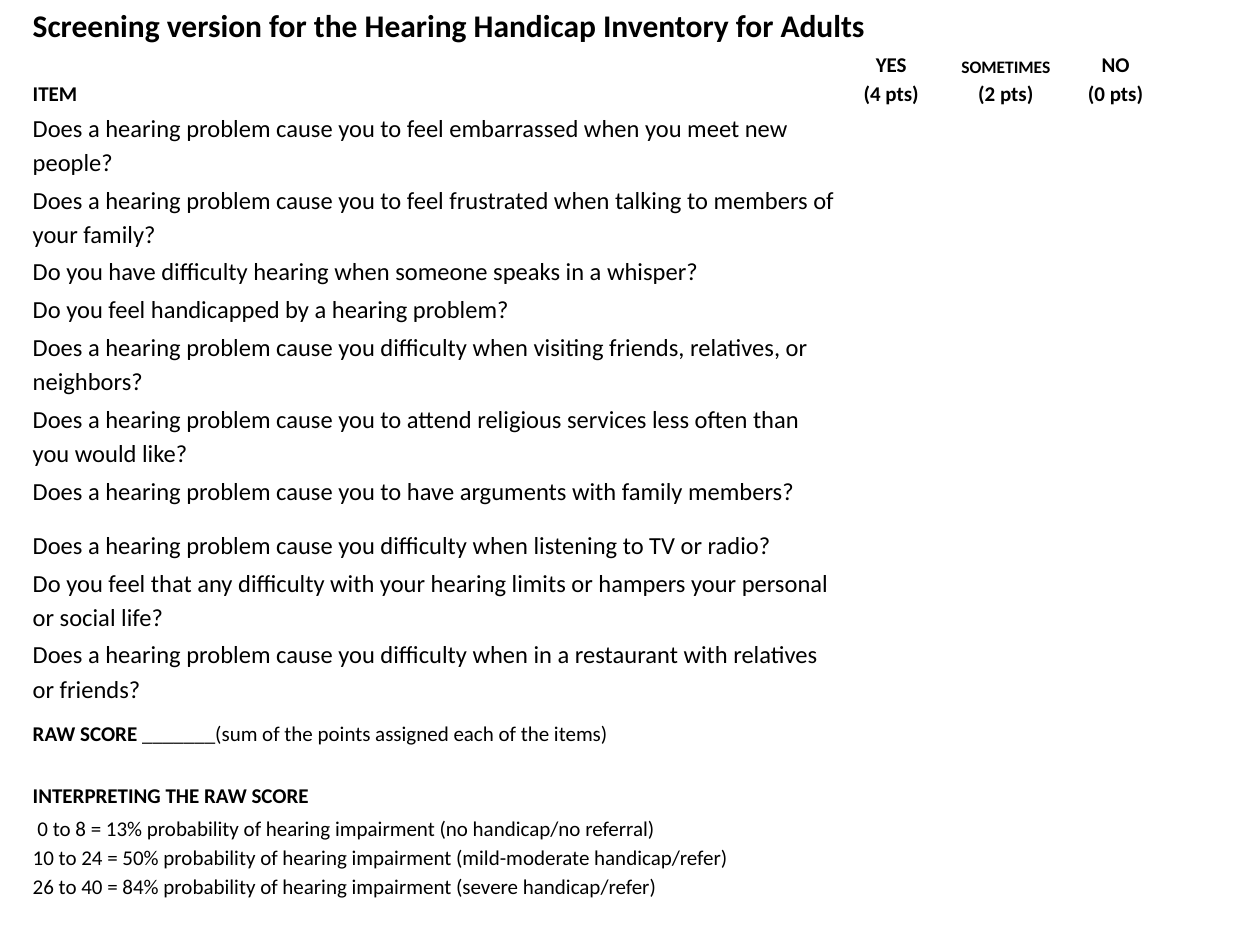
from lxml.etree import SubElement
from pptx import Presentation
from pptx.dml.color import RGBColor
from pptx.enum.text import MSO_ANCHOR as Anchor, PP_ALIGN as Align
from pptx.oxml.ns import qn
from pptx.util import Pt

TITLE = "Screening version for the Hearing Handicap Inventory for Adults"
HEADINGS = ["ITEM", "YES\n(4 pts)", "SOMETIMES\n(2 pts)", "NO\n(0 pts)"]
QUESTIONS = [
    "Does a hearing problem cause you to feel embarrassed when you meet new people?",
    "Does a hearing problem cause you to feel frustrated when talking to members of your family?",
    "Do you have difficulty hearing when someone speaks in a whisper?",
    "Do you feel handicapped by a hearing problem?",
    "Does a hearing problem cause you difficulty when visiting friends, relatives, or neighbors?",
    "Does a hearing problem cause you to attend religious services less often than you would like?",
    "Does a hearing problem cause you to have arguments with family members?",
    "Does a hearing problem cause you difficulty when listening to TV or radio?",
    "Do you feel that any difficulty with your hearing limits or hampers your personal or social life?",
    "Does a hearing problem cause you difficulty when in a restaurant with relatives or friends?",
]
RAW_SCORE = ["RAW SCORE", " _______(sum of the points assigned each of the items)"]
RANGES = (
    " 0 to 8 = 13% probability of hearing impairment (no handicap/no referral)\n"
    "10 to 24 = 50% probability of hearing impairment (mild-moderate handicap/refer)\n"
    "26 to 40 = 84% probability of hearing impairment (severe handicap/refer)"
)
COLUMN_WIDTHS = [460, 62.6, 68.4, 57]
ONE_LINE, TWO_LINES = 21.6, 41
QUESTION_HEIGHTS = [TWO_LINES, TWO_LINES, ONE_LINE, ONE_LINE, TWO_LINES,
                    TWO_LINES, 31, ONE_LINE, TWO_LINES, 46.8]
ROW_HEIGHTS = [26.6, 35.3, *QUESTION_HEIGHTS, 35.3, 18.7, 52.6]


def style_span(span, size, bold, color="000000"):
    span.font.name = "Calibri"
    span.font.size = Pt(size)
    span.font.bold = bold
    span.font.color.rgb = RGBColor.from_string(color)


def write_cell(cell, text, size, bold=False, align=Align.LEFT):
    cell.text_frame.text = text
    for para in cell.text_frame.paragraphs:
        para.line_spacing = 1.15
        para.alignment = align
        for span in para.runs:
            style_span(span, size, bold)


deck = Presentation()
deck.slide_width, deck.slide_height = Pt(720), Pt(540)
page = deck.slides.add_slide(deck.slide_layouts[6])

frame = page.shapes.add_table(len(ROW_HEIGHTS), len(COLUMN_WIDTHS), Pt(18), Pt(0),
                              Pt(sum(COLUMN_WIDTHS)), Pt(sum(ROW_HEIGHTS)))
table = frame.table
table.first_row = table.horz_banding = False
for column, width in zip(table.columns, COLUMN_WIDTHS):
    column.width = Pt(width)
for row, height in zip(table.rows, ROW_HEIGHTS):
    row.height = Pt(height)

score_row = 2 + len(QUESTIONS)
for row_index in (0, score_row, score_row + 1, score_row + 2):
    table.cell(row_index, 0).merge(table.cell(row_index, len(COLUMN_WIDTHS) - 1))

write_cell(table.cell(0, 0), TITLE, 18, True)
for index, heading in enumerate(HEADINGS):
    write_cell(table.cell(1, index), heading, 12, True, Align.CENTER if index else Align.LEFT)
table.cell(1, 2).text_frame.paragraphs[0].runs[0].font.size = Pt(10)

for index, question in enumerate(QUESTIONS, start=2):
    write_cell(table.cell(index, 0), question, 14)

score_cell = table.cell(score_row, 0)
write_cell(score_cell, RAW_SCORE[0], 12, True)
score_span = score_cell.text_frame.paragraphs[0].add_run()
score_span.text = RAW_SCORE[1]
style_span(score_span, 12, False)

write_cell(table.cell(score_row + 1, 0), "INTERPRETING THE RAW SCORE", 12, True)
write_cell(table.cell(score_row + 2, 0), RANGES, 12)

for row_index, row in enumerate(table.rows):
    for cell in row.cells:
        cell.fill.background()
        cell.margin_left = cell.margin_right = Pt(0.72)
        cell.margin_top = cell.margin_bottom = Pt(0.72)
        cell.vertical_anchor = Anchor.BOTTOM if row_index < 2 else Anchor.TOP
        if not cell.text_frame.text:
            # An empty cell would otherwise stretch its row to fit 18 pt text.
            SubElement(cell.text_frame.paragraphs[0]._p, qn("a:endParaRPr"), sz="1000")

deck.save("out.pptx")
